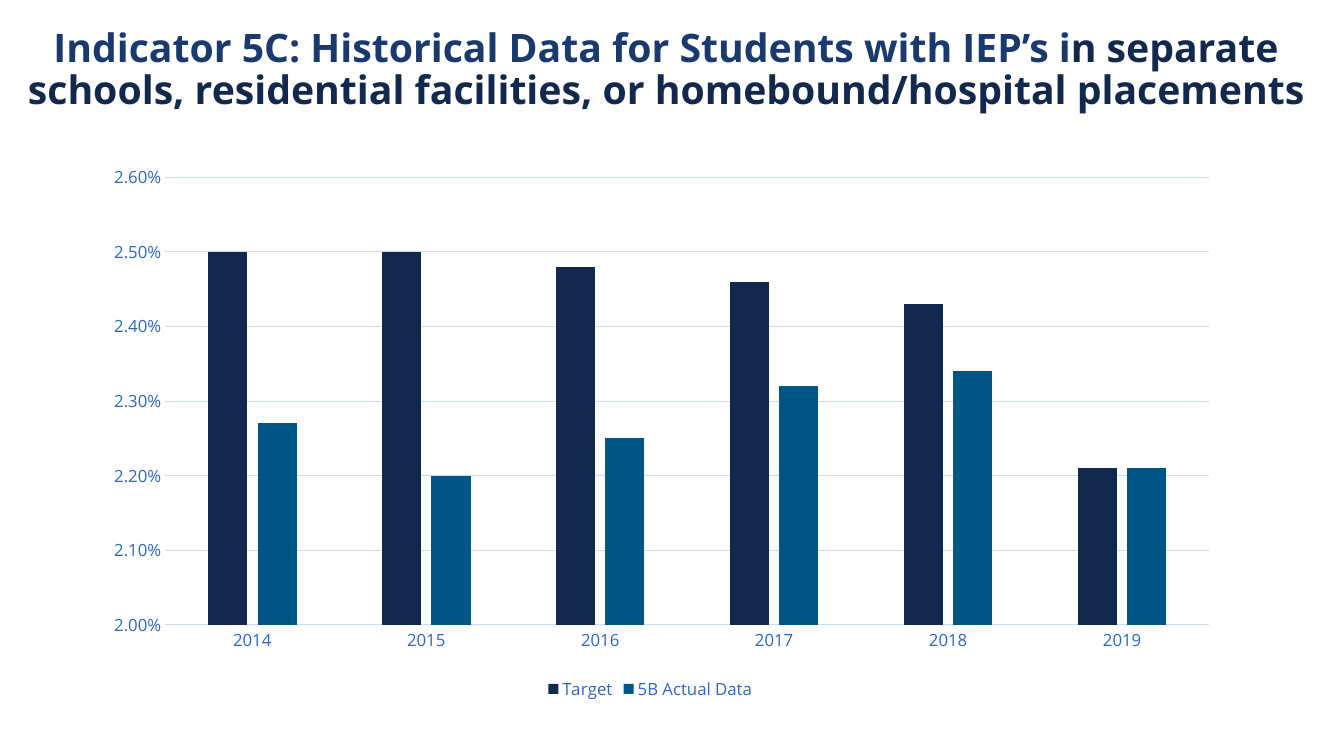
from lxml import etree
from pptx import Presentation
from pptx.chart.data import CategoryChartData
from pptx.dml.color import RGBColor
from pptx.enum.chart import XL_CHART_TYPE, XL_LEGEND_POSITION, XL_TICK_MARK
from pptx.enum.text import MSO_ANCHOR, MSO_AUTO_SIZE, PP_ALIGN
from pptx.oxml.ns import qn
from pptx.util import Inches, Pt

CLUSTERED = XL_CHART_TYPE.COLUMN_CLUSTERED
LEGEND_BOTTOM = XL_LEGEND_POSITION.BOTTOM
NO_TICK = XL_TICK_MARK.NONE
TOP = MSO_ANCHOR.TOP
GROW = MSO_AUTO_SIZE.SHAPE_TO_FIT_TEXT
CENTER = PP_ALIGN.CENTER

COLORS = {
    "title": "1A3A6E",
    "navy": "12284C",
    "teal": "005587",
    "label": "2E66C2",
    "grid": "CDDBF3",
}


class SlideBuilder:
    font_name = "Open Sans"

    def __init__(self, slide):
        self.slide = slide

    def color(self, name):
        return RGBColor.from_string(COLORS[name])

    def style_font(self, font, size, color, bold=False):
        font.name = self.font_name
        font.size = Pt(size)
        font.bold = bold
        font.color.rgb = self.color(color)

    def style_line(self, line):
        line.color.rgb = self.color("grid")
        line.width = Pt(0.75)

    def heading(self, left, top, width, height, pieces):
        box = self.slide.shapes.add_textbox(
            Inches(left), Inches(top), Inches(width), Inches(height))
        frame = box.text_frame
        frame.word_wrap = True
        frame.auto_size = GROW
        frame.vertical_anchor = TOP
        frame.margin_left = frame.margin_right = Inches(0.05)
        paragraph = frame.paragraphs[0]
        paragraph.alignment = CENTER
        paragraph.line_spacing = 0.9
        for text, color in pieces:
            run = paragraph.add_run()
            run.text = text
            self.style_font(run.font, 28, color, bold=True)

    def column_chart(self, left, top, width, height, years, series, plot_area):
        data = CategoryChartData(number_format="0.00%")
        data.categories = years
        for name, values, _ in series:
            data.add_series(name, values)
        chart = self.slide.shapes.add_chart(
            CLUSTERED, Inches(left), Inches(top), Inches(width),
            Inches(height), data).chart
        chart.has_title = False
        self.style_font(chart.font, 10, "navy")

        columns = chart.plots[0]
        columns.vary_by_categories = False
        columns.gap_width = 219
        columns.overlap = -27
        for column, (_, _, color) in zip(columns.series, series):
            column.format.fill.solid()
            column.format.fill.fore_color.rgb = self.color(color)
            column.invert_if_negative = False

        for axis in (chart.category_axis, chart.value_axis):
            axis.major_tick_mark = axis.minor_tick_mark = NO_TICK
            self.style_font(axis.tick_labels.font, 12, "label")
        self.style_line(chart.category_axis.format.line)

        percent = chart.value_axis
        percent.minimum_scale = 0.02
        percent.maximum_scale = 0.026
        percent.major_unit = 0.001
        percent.tick_labels.number_format = "0.00%"
        percent.tick_labels.number_format_is_linked = False
        percent.format.line.fill.background()
        percent.has_major_gridlines = True
        self.style_line(percent.major_gridlines.format.line)

        chart.has_legend = True
        chart.legend.position = LEGEND_BOTTOM
        chart.legend.include_in_layout = False
        self.style_font(chart.legend.font, 12, "label")
        self.place_plot(chart, plot_area)

    def place_plot(self, chart, fractions):
        plot = chart.element.find(".//" + qn("c:plotArea"))
        layout = plot.find(qn("c:layout"))
        if layout is None:
            layout = etree.Element(qn("c:layout"))
            plot.insert(0, layout)
        manual = etree.SubElement(layout, qn("c:manualLayout"))
        settings = [("layoutTarget", "inner"), ("xMode", "edge"),
                    ("yMode", "edge"), *zip("xywh", fractions)]
        for tag, value in settings:
            etree.SubElement(manual, qn("c:" + tag)).set("val", str(value))


def main():
    deck = Presentation()
    deck.slide_width = Inches(13.33)
    deck.slide_height = Inches(7.5)
    builder = SlideBuilder(deck.slides.add_slide(deck.slide_layouts[6]))

    builder.heading(0.18, 0.23, 12.85, 1.99, [
        ("Indicator 5C: Historical Data for Students with IEP’s i", "title"),
        ("n separate schools, residential facilities, "
         "or homebound/hospital placements", "navy"),
    ])
    builder.column_chart(
        0.64, 1.06, 11.62, 5.93,
        [str(year) for year in range(2014, 2020)],
        [
            ("Target",
             (0.025, 0.025, 0.0248, 0.0246, 0.0243, 0.0221), "navy"),
            ("5B Actual Data",
             (0.0227, 0.022, 0.0225, 0.0232, 0.0234, 0.0221), "teal"),
        ],
        (0.086, 0.118, 0.891, 0.749))
    deck.save("out.pptx")


if __name__ == "__main__":
    main()
